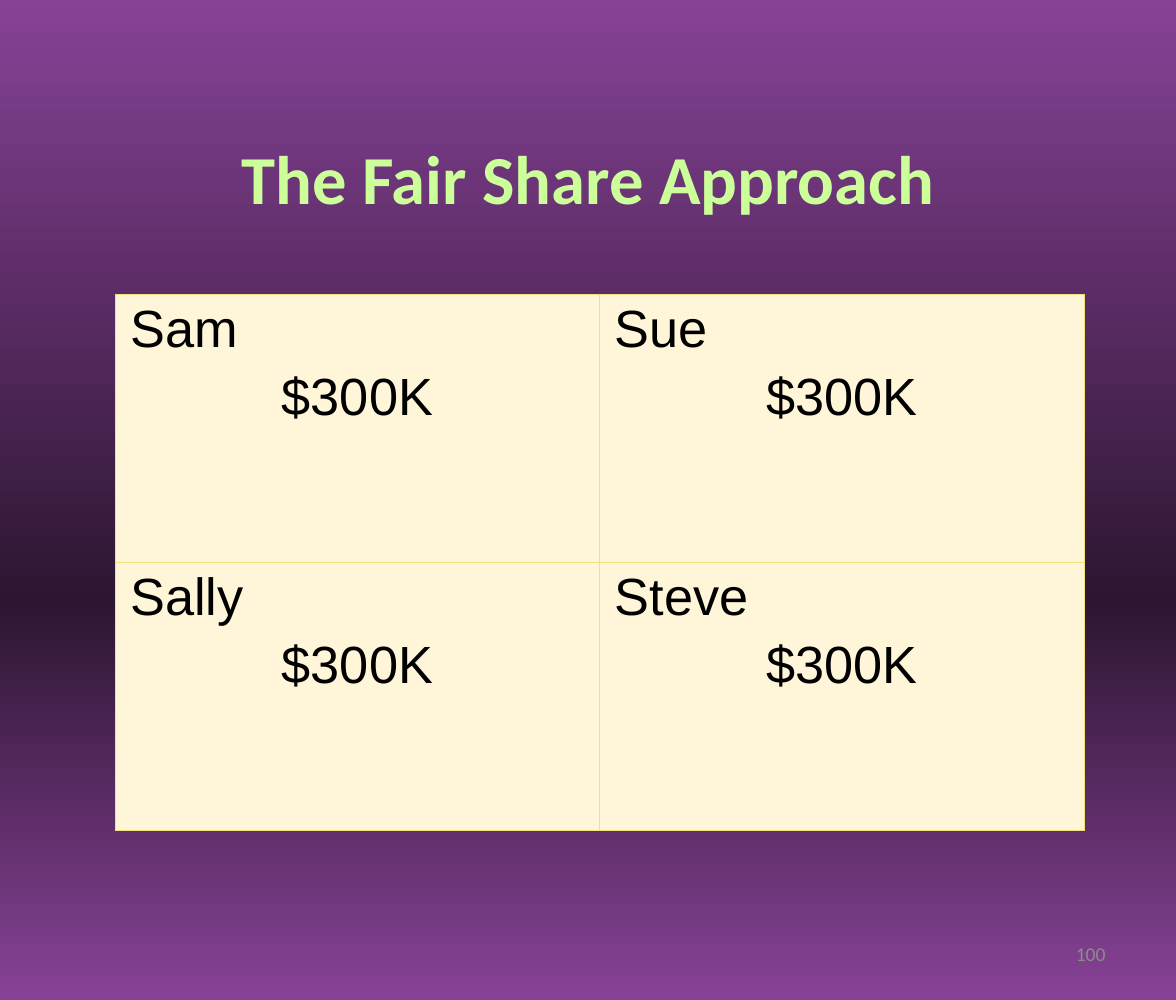
"""Build the Fair Share Approach slide with its two-by-two table of equal shares."""
import copy
import dataclasses

import lxml.etree
import pptx
import pptx.dml.color
import pptx.enum.text
import pptx.oxml.ns
import pptx.util

Inches = pptx.util.Inches
Pt = pptx.util.Pt
Align = pptx.enum.text.PP_ALIGN
Anchor = pptx.enum.text.MSO_ANCHOR
qn = pptx.oxml.ns.qn


@dataclasses.dataclass(frozen=True)
class Theme:
    backdrop: tuple = ((0, "874296"), (0.6, "2D1632"), (1, "874296"))
    title: str = "CCFF99"
    ink: str = "000000"
    cell: str = "FFF5D9"
    border: str = "F4E279"
    number: str = "8C8C8C"
    heading_font: str = "Calibri"
    table_font: str = "Arial"
    title_size: float = 42
    table_size: float = 32
    number_size: float = 12
    border_width: float = 0.75
    paragraph_gap: float = 5.5


@dataclasses.dataclass(frozen=True)
class Share:
    name: str
    amount: str = "$300K"


THEME = Theme()
SHARES = ((Share("Sam"), Share("Sue")), (Share("Sally"), Share("Steve")))


def rgb(value: str) -> pptx.dml.color.RGBColor:
    return pptx.dml.color.RGBColor.from_string(value)


def add_span(para, text: str, font: str, size: float, color: str, bold: bool = False) -> None:
    span = para.add_run()
    span.text = text
    span.font.name = font
    span.font.size = Pt(size)
    span.font.bold = bold
    span.font.color.rgb = rgb(color)


def place(box, left: float, top: float, width: float, height: float) -> None:
    box.left, box.top = Inches(left), Inches(top)
    box.width, box.height = Inches(width), Inches(height)


def paint_background(page) -> None:
    fill = page.background.fill
    fill.gradient()
    fill.gradient_angle = 270
    stops = page.element.find(".//" + qn("a:gsLst"))
    stops.append(copy.deepcopy(stops[-1]))
    for stop, (position, color) in zip(fill.gradient_stops, THEME.backdrop):
        stop.position = position
        stop.color.rgb = rgb(color)


def add_title(page, text: str) -> None:
    box = page.shapes.title
    place(box, 0, 0.92, 10, 1.17)
    box.text_frame.vertical_anchor = Anchor.MIDDLE
    para = box.text_frame.paragraphs[0]
    para.alignment = Align.CENTER
    add_span(para, text, THEME.heading_font, THEME.title_size, THEME.title, bold=True)


def set_borders(cell) -> None:
    properties = cell._tc.get_or_add_tcPr()
    for index, side in enumerate(("lnL", "lnR", "lnT", "lnB")):
        line = lxml.etree.Element(qn(f"a:{side}"), w=str(Pt(THEME.border_width)))
        solid = lxml.etree.SubElement(line, qn("a:solidFill"))
        lxml.etree.SubElement(solid, qn("a:srgbClr"), val=THEME.border)
        properties.insert(index, line)


def fill_cell(cell, share: Share) -> None:
    cell.fill.solid()
    cell.fill.fore_color.rgb = rgb(THEME.cell)
    set_borders(cell)
    cell.margin_left = cell.margin_right = Inches(0.13)
    cell.margin_top = cell.margin_bottom = Inches(0.05)
    name = cell.text_frame.paragraphs[0]
    amount = cell.text_frame.add_paragraph()
    amount.alignment = Align.CENTER
    amount.space_before = Pt(THEME.paragraph_gap)
    for para, text in ((name, share.name), (amount, share.amount)):
        add_span(para, text, THEME.table_font, THEME.table_size, THEME.ink)


def add_share_table(page, shares: tuple) -> None:
    frame = page.shapes.add_table(
        len(shares), len(shares[0]), Inches(0.98), Inches(2.5), Inches(8.24), Inches(4.56)
    )
    table = frame.table
    table.first_row = False
    table.horz_banding = False
    for row, row_shares in enumerate(shares):
        for column, share in enumerate(row_shares):
            fill_cell(table.cell(row, column), share)


def add_page_number(page, text: str) -> None:
    box = page.shapes.add_textbox(Inches(7.17), Inches(7.88), Inches(2.33), Inches(0.45))
    box.text_frame.word_wrap = True
    box.text_frame.vertical_anchor = Anchor.MIDDLE
    para = box.text_frame.paragraphs[0]
    para.alignment = Align.RIGHT
    add_span(para, text, THEME.heading_font, THEME.number_size, THEME.number)


def main() -> None:
    deck = pptx.Presentation()
    deck.slide_width, deck.slide_height = Inches(10), Inches(8.5)
    page = deck.slides.add_slide(deck.slide_layouts.get_by_name("Title Only"))
    paint_background(page)
    add_title(page, "The Fair Share Approach")
    add_share_table(page, SHARES)
    add_page_number(page, "100")
    deck.save("out.pptx")


if __name__ == "__main__":
    main()
